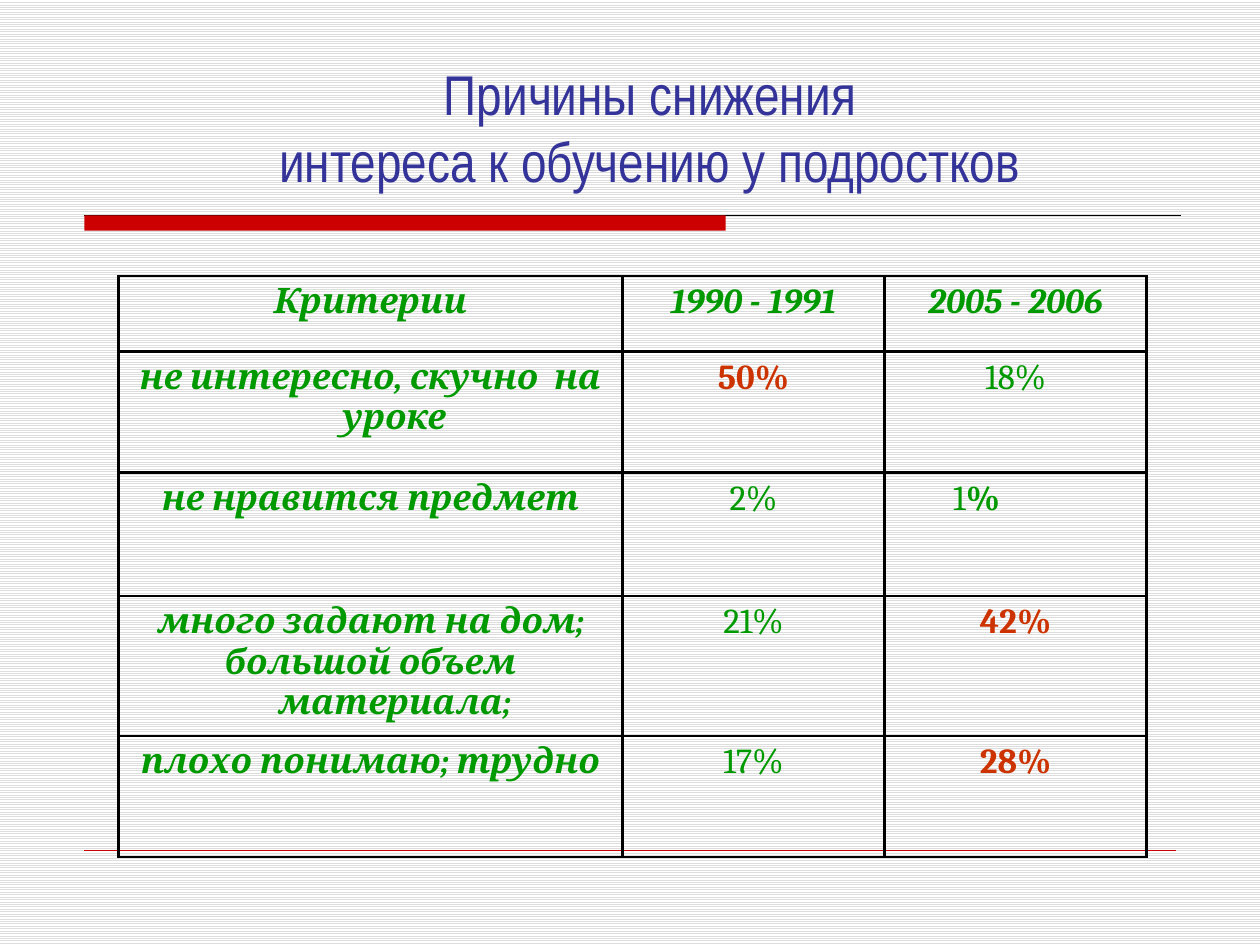
import pptx
import pptx.dml.color
import pptx.enum.dml
import pptx.enum.shapes
import pptx.enum.text
import pptx.oxml
import pptx.oxml.ns
import pptx.util
import lxml.etree

GREEN, ORANGE, RED, BLACK = "009900", "CC3300", "CC0000", "000000"
CENTER = pptx.enum.text.PP_ALIGN.CENTER


def grid(cells):
    """The slide is a grid of 100 columns by 75 rows."""
    return pptx.util.Inches(cells / 10)


def color(value):
    return pptx.dml.color.RGBColor.from_string(value)


deck = pptx.Presentation()
deck.slide_width, deck.slide_height = grid(100), grid(75)
page = deck.slides.add_slide(deck.slide_layouts[5])

# Background of fine horizontal lines
back = page.background.fill
back.patterned()
back.pattern = pptx.enum.dml.MSO_PATTERN.LIGHT_HORIZONTAL
back.fore_color.rgb = color("DDDDDD")
back.back_color.rgb = color("FFFFFF")

# Title
title = page.shapes.title
title.left, title.top, title.width, title.height = map(grid, (17.5, 4.2, 68.2, 11))
box = title.text_frame
box.word_wrap = False
box.auto_size = pptx.enum.text.MSO_AUTO_SIZE.NONE
box.vertical_anchor = pptx.enum.text.MSO_ANCHOR.TOP
for number, line in enumerate(["Причины снижения", "интереса к обучению у подростков"]):
    para = box.add_paragraph() if number else box.paragraphs[0]
    para.alignment = CENTER
    span = para.add_run()
    span.text = line
    span.font.name = "Arial Narrow"
    span.font.size = pptx.util.Pt(32)
    span.font.color.rgb = color("333399")

# Rules under the title and at the foot
for right, row, tint, weight in [(93.7, 17.1, BLACK, 0.75), (93.3, 67.5, RED, 0.25)]:
    rule = page.shapes.add_connector(
        pptx.enum.shapes.MSO_CONNECTOR.STRAIGHT,
        grid(6.7), grid(row), grid(right), grid(row))
    rule.line.color.rgb = color(tint)
    rule.line.width = pptx.util.Pt(weight)
    lxml.etree.SubElement(rule._element.spPr, pptx.oxml.ns.qn("a:effectLst"))

# Red bar
bar = page.shapes.add_shape(
    pptx.enum.shapes.MSO_SHAPE.RECTANGLE, grid(6.7), grid(17.1), grid(50.9), grid(1.2))
bar.shadow.inherit = False
bar.fill.solid()
bar.fill.fore_color.rgb = color(RED)
bar.line.fill.background()

# Table: each cell holds paragraphs, each paragraph holds runs (text, colour, bold, italic)
HEAD = (GREEN, True, True)
PLAIN = (GREEN, False, False)
BOLD = (GREEN, True, False)
PEAK = (ORANGE, True, False)
rows = [
    [[[("Критерии", *HEAD)]], [[("1990 - 1991", *HEAD)]], [[("2005 - 2006", *HEAD)]]],
    [[[("не интересно, скучно  на уроке", *HEAD)]], [[("50%", *PEAK)]], [[("18%", *PLAIN)]]],
    [[[("не нравится предмет", *HEAD)]], [[("2%", *PLAIN)]],
     [[("1", *PLAIN), ("%", *BOLD)]]],
    [[[("много задают на дом;", *HEAD)], [("большой объем материала;", *HEAD)]],
     [[("21%", *PLAIN)]], [[("42%", *PEAK)]]],
    [[[("плохо понимаю; трудно", *HEAD)]], [[("17%", *PLAIN)]], [[("28%", *PEAK)]]],
]
widths = [40, 20.8, 20.8]
heights = [6, 9.6, 9.8, 11.1, 9.6]
table = page.shapes.add_table(
    len(rows), len(widths), grid(9.4), grid(21.9),
    grid(sum(widths)), grid(sum(heights))).table
table.first_row = table.horz_banding = False
for column, width in zip(table.columns, widths):
    column.width = grid(width)

for r, (row, height) in enumerate(zip(rows, heights)):
    table.rows[r].height = grid(height)
    for c, paragraphs in enumerate(row):
        cell = table.cell(r, c)

        # Borders come before the fill in the cell's properties
        for side in ("lnL", "lnR", "lnT", "lnB"):
            cell._tc.get_or_add_tcPr().append(pptx.oxml.parse_xml(
                f'<a:{side} {pptx.oxml.ns.nsdecls("a")} w="{pptx.util.Pt(1.5)}">'
                f'<a:solidFill><a:srgbClr val="{BLACK}"/></a:solidFill></a:{side}>'))
        cell.fill.background()

        # Text with a hanging indent
        for number, runs in enumerate(paragraphs):
            frame = cell.text_frame
            para = frame.add_paragraph() if number else frame.paragraphs[0]
            para.alignment = CENTER
            properties = para._p.get_or_add_pPr()
            properties.set("marL", str(grid(3.8)))
            properties.set("indent", str(-grid(3.8)))
            for text, tint, bold, italic in runs:
                span = para.add_run()
                span.text = text
                span.font.name = "Cambria"
                span.font.size = pptx.util.Pt(20)
                span.font.color.rgb = color(tint)
                span.font.bold, span.font.italic = bold, italic

# The 1% value sits left of its column's centre
table.cell(2, 2).margin_right = grid(7.2)

deck.save("out.pptx")
